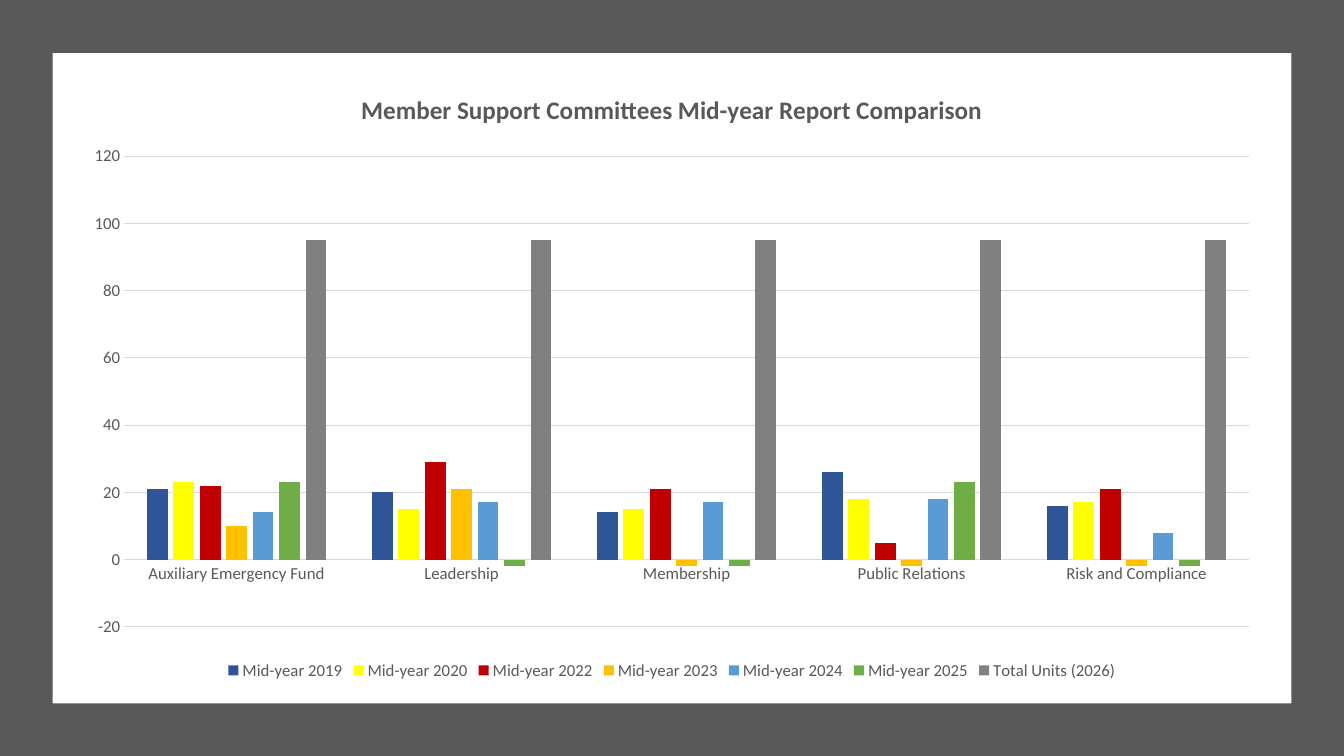
from pptx import Presentation
from pptx.chart.data import CategoryChartData
from pptx.dml.color import RGBColor
from pptx.enum import chart as charts, shapes
from pptx.util import Pt

DARK_GRAY = RGBColor(0x59, 0x59, 0x59)
LIGHT_GRAY = RGBColor(0xD9, 0xD9, 0xD9)
WHITE = RGBColor(0xFF, 0xFF, 0xFF)
BLUE = RGBColor(0x2F, 0x55, 0x97)
YELLOW = RGBColor(0xFF, 0xFF, 0x00)
RED = RGBColor(0xC0, 0x00, 0x00)
GOLD = RGBColor(0xFF, 0xC0, 0x00)
SKY = RGBColor(0x5B, 0x9B, 0xD5)
GREEN = RGBColor(0x70, 0xAD, 0x47)
GRAY = RGBColor(0x80, 0x80, 0x80)

COMMITTEES = ["Auxiliary Emergency Fund", "Leadership", "Membership",
              "Public Relations", "Risk and Compliance"]
REPORTS = [
    ("Mid-year 2019", BLUE, (21, 20, 14, 26, 16)),
    ("Mid-year 2020", YELLOW, (23, 15, 15, 18, 17)),
    ("Mid-year 2022", RED, (22, 29, 21, 5, 21)),
    ("Mid-year 2023", GOLD, (10, 21, -2, -2, -2)),
    ("Mid-year 2024", SKY, (14, 17, 17, 18, 8)),
    ("Mid-year 2025", GREEN, (23, -2, -2, 23, -2)),
    ("Total Units (2026)", GRAY, (95,) * len(COMMITTEES)),
]

presentation = Presentation()
presentation.slide_width, presentation.slide_height = Pt(960), Pt(540)
slide = presentation.slides.add_slide(presentation.slide_layouts[6])

# Dark frame with a white panel inside
for left, top, width, height, color in [
    (0, 0, 960, 540, DARK_GRAY),
    (37.5, 38, 885, 464.5, WHITE),
]:
    panel = slide.shapes.add_shape(shapes.MSO_SHAPE.RECTANGLE,
                                   Pt(left), Pt(top), Pt(width), Pt(height))
    panel.shadow.inherit = False
    panel.fill.solid()
    panel.fill.fore_color.rgb = color
    panel.line.fill.background()

# Chart
data = CategoryChartData()
data.categories = COMMITTEES
for name, _, values in REPORTS:
    data.add_series(name, values)
chart = slide.shapes.add_chart(charts.XL_CHART_TYPE.COLUMN_CLUSTERED,
                               Pt(50.4), Pt(50.4), Pt(859), Pt(438.5), data).chart
chart.font.name = "Calibri"
chart.font.size = Pt(12)
chart.font.color.rgb = DARK_GRAY

chart.has_title = True
title = chart.chart_title.text_frame
title.text = "Member Support Committees Mid-year Report Comparison"
title_font = title.paragraphs[0].font
title_font.name = "Calibri"
title_font.size = Pt(18)
title_font.bold = True
title_font.color.rgb = DARK_GRAY
chart.chart_title.include_in_layout = False

chart.has_legend = True
chart.legend.position = charts.XL_LEGEND_POSITION.BOTTOM
chart.legend.include_in_layout = False

plot = chart.plots[0]
plot.gap_width = 219
plot.overlap = -27
plot.vary_by_categories = False
for series, (_, color, _) in zip(plot.series, REPORTS):
    series.invert_if_negative = False
    series.format.fill.solid()
    series.format.fill.fore_color.rgb = color

# Axes
value_axis = chart.value_axis
value_axis.minimum_scale = -20
value_axis.maximum_scale = 120
value_axis.major_unit = 20
value_axis.format.line.fill.background()
for axis in (chart.category_axis, value_axis):
    axis.major_tick_mark = charts.XL_TICK_MARK.NONE
    axis.minor_tick_mark = charts.XL_TICK_MARK.NONE
for line in (chart.category_axis.format.line, value_axis.major_gridlines.format.line):
    line.color.rgb = LIGHT_GRAY
    line.width = Pt(0.75)

presentation.save("out.pptx")
